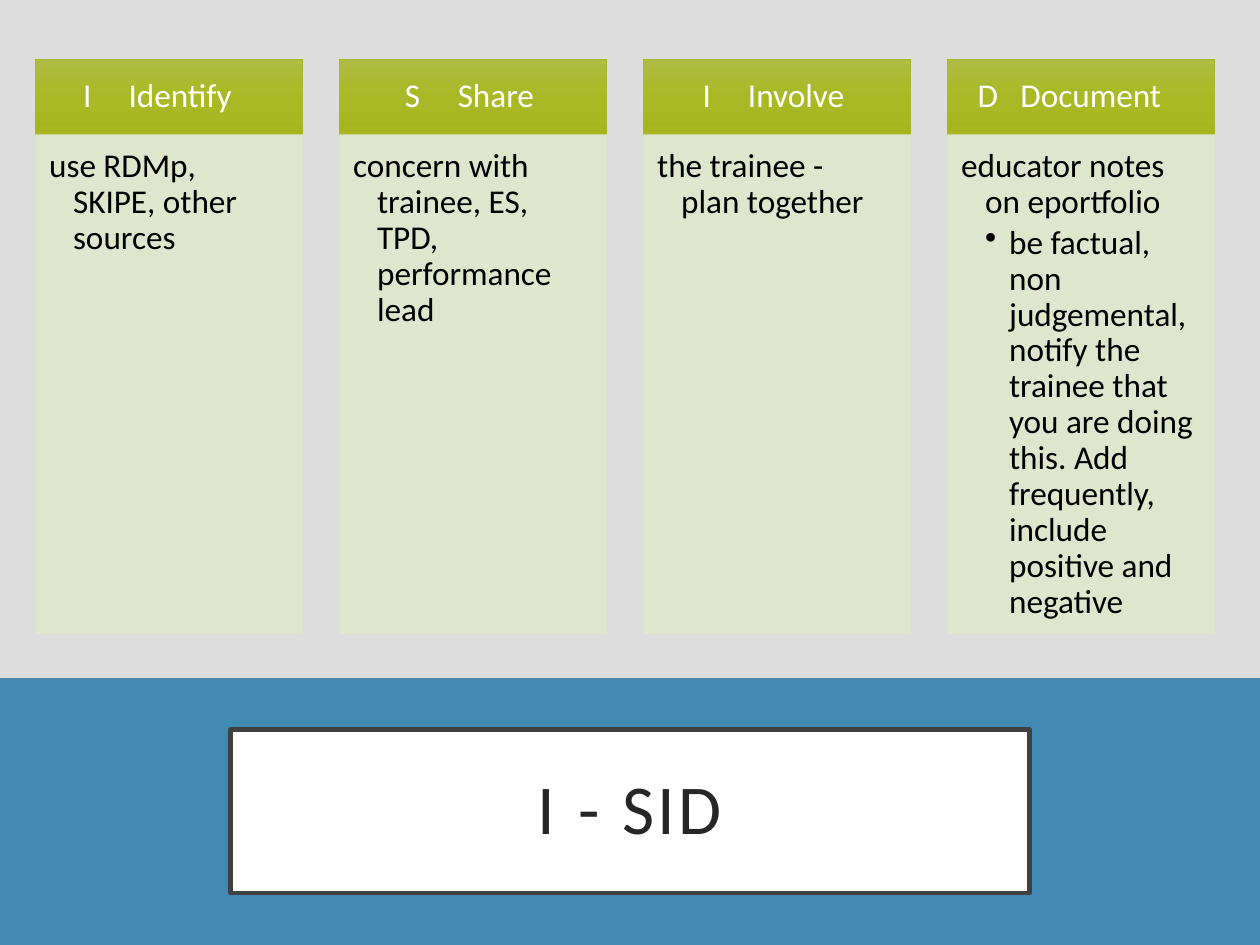
from copy import deepcopy

from lxml.etree import SubElement
from pptx import Presentation
from pptx.dml.color import RGBColor
from pptx.enum.shapes import MSO_SHAPE
from pptx.enum.text import MSO_ANCHOR, PP_ALIGN
from pptx.oxml.ns import qn
from pptx.util import Inches, Pt

FONT = "Calibri"
BLUE = RGBColor(0x41, 0x8A, 0xB3)
GREY = RGBColor(0xDD, 0xDD, 0xDD)
WHITE = RGBColor(0xFF, 0xFF, 0xFF)
BLACK = RGBColor(0x00, 0x00, 0x00)
FRAME = RGBColor(0x40, 0x40, 0x40)
TITLE_INK = RGBColor(0x26, 0x26, 0x26)
GREEN = RGBColor(0xA6, 0xB7, 0x27)
PALE_GREEN = RGBColor(0xE1, 0xE6, 0xCD)
HEADER_STOPS = [
    (0, RGBColor(0xAD, 0xBD, 0x42)),
    (0.5, RGBColor(0xA8, 0xB9, 0x25)),
    (1, RGBColor(0xA5, 0xB6, 0x1F)),
]

# Letter, word, their offsets from the column's left edge, body, bullet points
COLUMNS = [
    ("I", "Identify", 0.38, 0.74, "use RDMp, SKIPE, other sources", []),
    ("S", "Share", 0.52, 0.94,
     "concern with trainee, ES, TPD, performance lead", []),
    ("I", "Involve", 0.47, 0.83, "the trainee -\vplan together", []),
    ("D", "Document", 0.24, 0.58, "educator notes on eportfolio",
     ["be factual, non judgemental, notify the trainee that you are doing "
      "this. Add frequently, include positive and negative"]),
]
COLUMN_PITCH = 2.413
HEADER_HEIGHT = 0.6
HEADER_INSET = 0.15
HANG = 0.19


def add_box(page, left, top, width, height, fill=None, line=None):
    box = page.shapes.add_shape(
        MSO_SHAPE.RECTANGLE,
        Inches(left), Inches(top), Inches(width), Inches(height))
    box.shadow.inherit = False
    if fill is not None:
        box.fill.solid()
        box.fill.fore_color.rgb = fill
    if line is None:
        box.line.fill.background()
    else:
        box.line.color.rgb = line
        box.line.width = Pt(0.5)
    return box


def set_insets(frame, left, top, right, bottom):
    frame.word_wrap = True
    frame.margin_left, frame.margin_top = Inches(left), Inches(top)
    frame.margin_right, frame.margin_bottom = Inches(right), Inches(bottom)


def format_para(para, color, margin, indent):
    para.alignment = PP_ALIGN.LEFT
    para.line_spacing = 0.9
    para.font.name, para.font.size = FONT, Pt(19)
    para.font.color.rgb = color
    properties = para._p.get_or_add_pPr()
    properties.set("marL", str(Inches(margin)))
    properties.set("indent", str(Inches(indent)))
    return properties


def fill_gradient(box):
    """Shade the box from top to bottom with the header colours."""
    box.fill.gradient()
    box.fill.gradient_angle = 270
    stop_list = next(box.element.iter(qn("a:gsLst")))
    stop_list.insert(1, deepcopy(stop_list[0]))
    for stop, (position, color) in zip(box.fill.gradient_stops, HEADER_STOPS):
        stop.position = position
        stop.color.rgb = color


def add_header(page, left, top, width, height, letter, word, letter_at, word_at):
    """The hanging indent sets the gap between the letter and the word."""
    box = add_box(page, left, top, width, height, line=GREEN)
    fill_gradient(box)
    frame = box.text_frame
    set_insets(frame, HEADER_INSET, 0.08, HEADER_INSET, 0.08)
    frame.vertical_anchor = MSO_ANCHOR.MIDDLE
    para = frame.paragraphs[0]
    para.text = f"{letter}\t{word}"
    format_para(para, WHITE, word_at - HEADER_INSET, letter_at - word_at)


def add_body(page, left, top, width, height, text, points):
    box = add_box(page, left, top, width, height, PALE_GREEN, PALE_GREEN)
    for color in box.element.spPr.iter(qn("a:srgbClr")):
        SubElement(color, qn("a:alpha"), val="90000")
    frame = box.text_frame
    set_insets(frame, 0.11, 0.11, 0.15, 0.17)
    frame.vertical_anchor = MSO_ANCHOR.TOP
    for index, line in enumerate([text, *points]):
        para = frame.add_paragraph() if index else frame.paragraphs[0]
        para.text = line
        para.level = 2 if index else 1
        para.space_after = Pt(2.85)
        properties = format_para(para, BLACK, HANG * para.level, -HANG)
        if index:
            bullet = properties.makeelement(qn("a:buChar"), {"char": "•"})
            properties.find(qn("a:defRPr")).addprevious(bullet)


def add_columns(page, left, top, width, height):
    for index, (letter, word, letter_at, word_at, text, points) in enumerate(COLUMNS):
        column_left = left + index * COLUMN_PITCH
        add_header(page, column_left, top, width, HEADER_HEIGHT,
                   letter, word, letter_at, word_at)
        add_body(page, column_left, top + HEADER_HEIGHT, width,
                 height - HEADER_HEIGHT, text, points)


def place_title(page, left, top, width, height):
    title = page.shapes.title
    page.shapes.element.append(title.element)  # in front of the bands
    title.left, title.top = Inches(left), Inches(top)
    title.width, title.height = Inches(width), Inches(height)
    title.fill.solid()
    title.fill.fore_color.rgb = WHITE
    title.line.color.rgb = FRAME
    title.line.width = Pt(2.5)
    frame = title.text_frame
    set_insets(frame, 0.2, 0.2, 0.2, 0.2)
    frame.vertical_anchor = MSO_ANCHOR.MIDDLE
    para = frame.paragraphs[0]
    para.alignment = PP_ALIGN.CENTER
    para.line_spacing = 0.9
    span = para.add_run()
    span.text = "I - SID"
    span.font.name, span.font.size = FONT, Pt(40)
    span.font.color.rgb = TITLE_INK
    next(title.element.iter(qn("a:rPr"))).set("spc", "200")


def main():
    deck = Presentation()
    deck.slide_width, deck.slide_height = Inches(10), Inches(7.5)
    page = deck.slides.add_slide(deck.slide_layouts[5])
    page.background.fill.solid()
    page.background.fill.fore_color.rgb = GREY
    add_box(page, 0, 5.38, 10, 2.12, BLUE)
    add_box(page, 0, 0, 10, 5.38, GREY)
    place_title(page, 1.83, 5.79, 6.34, 1.3)
    add_columns(page, 0.28, 0.47, 2.12, 4.56)
    deck.save("out.pptx")


if __name__ == "__main__":
    main()
